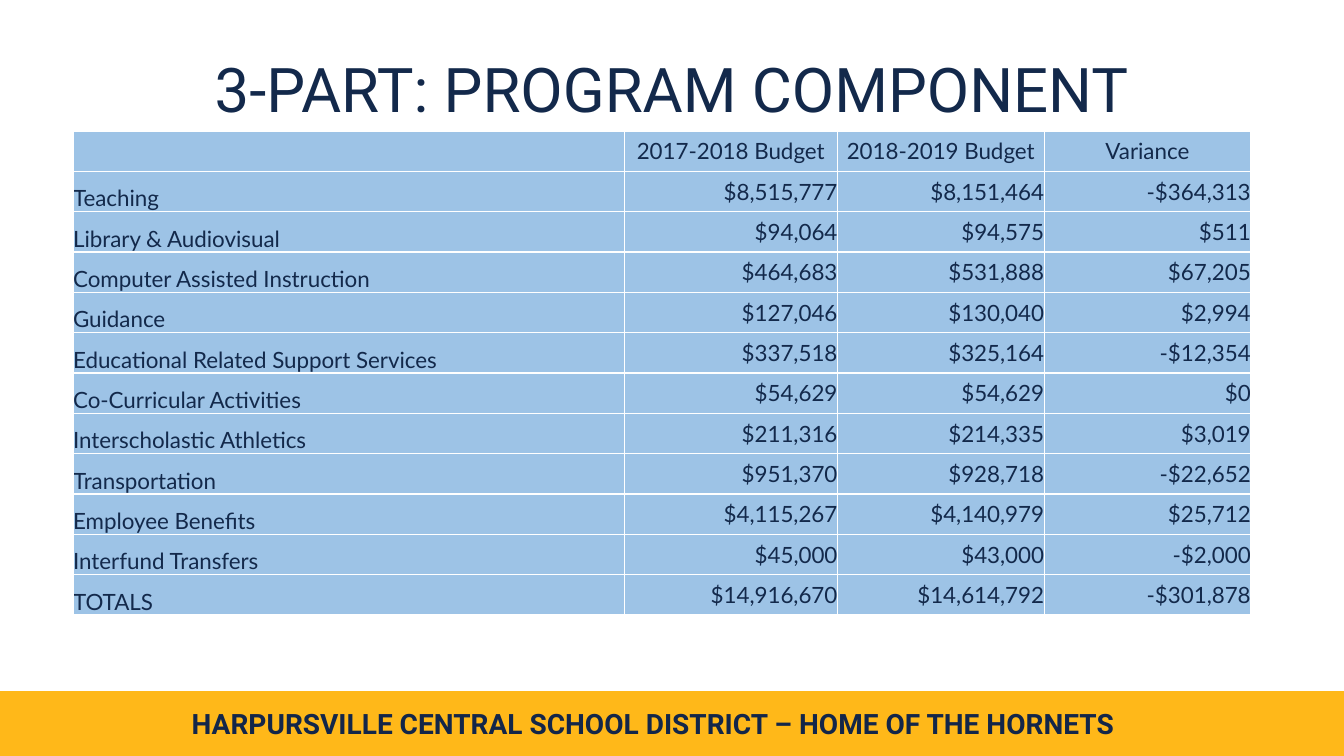
from dataclasses import dataclass

from lxml.etree import SubElement
from pptx import Presentation
from pptx.dml.color import RGBColor
from pptx.enum.shapes import MSO_SHAPE as Shape
from pptx.enum.text import MSO_ANCHOR as Anchor, MSO_AUTO_SIZE as AutoSize, PP_ALIGN as Align
from pptx.oxml.ns import qn
from pptx.util import Pt

PX = 7620
ROW_HEIGHT = 48
COLUMN_WIDTHS = (656, 254, 246, 246)
HEADINGS = ("", "2017-2018 Budget", "2018-2019 Budget", "Variance")
BUDGET = (
    ("Teaching", "$8,515,777", "$8,151,464", "-$364,313"),
    ("Library & Audiovisual", "$94,064", "$94,575", "$511"),
    ("Computer Assisted Instruction", "$464,683", "$531,888", "$67,205"),
    ("Guidance", "$127,046", "$130,040", "$2,994"),
    ("Educational Related Support Services", "$337,518", "$325,164", "-$12,354"),
    ("Co-Curricular Activities", "$54,629", "$54,629", "$0"),
    ("Interscholastic Athletics", "$211,316", "$214,335", "$3,019"),
    ("Transportation", "$951,370", "$928,718", "-$22,652"),
    ("Employee Benefits", "$4,115,267", "$4,140,979", "$25,712"),
    ("Interfund Transfers", "$45,000", "$43,000", "-$2,000"),
    ("TOTALS", "$14,916,670", "$14,614,792", "-$301,878"),
)


@dataclass(frozen=True)
class Theme:
    """Colours, fonts and type sizes of the slide."""
    navy: str = "13294B"
    footer_navy: str = "132649"
    gold: str = "FFB819"
    sky: str = "9DC3E6"
    white: str = "FFFFFF"
    display_font: str = "Roboto"
    table_font: str = "Lato"
    title_size: int = 44
    footer_size: int = 20
    table_size: int = 16


THEME = Theme()


def px(*lengths):
    """Turn pixel lengths into EMU."""
    return [length * PX for length in lengths]


def paint(fill, colour):
    """Give a fill one solid colour."""
    fill.solid()
    fill.fore_color.rgb = RGBColor.from_string(colour)


def write(para, text, font, size, colour, align, bold=False):
    """Add one formatted run to a paragraph."""
    para.alignment = align
    span = para.add_run()
    span.text = text
    span.font.name = font
    span.font.size = Pt(size)
    span.font.bold = bold
    span.font.color.rgb = RGBColor.from_string(colour)


def add_footer(page, text):
    """Draw the gold band and the district line on it."""
    band = page.shapes.add_shape(Shape.RECTANGLE, *px(0, 823, 1600, 76))
    band.shadow.inherit = False
    paint(band.fill, THEME.gold)
    paint(band.line.fill, THEME.gold)
    band.line.width = Pt(1)
    box = page.shapes.add_textbox(*px(211, 835, 1133, 53))
    box.text_frame.word_wrap = True
    box.text_frame.auto_size = AutoSize.SHAPE_TO_FIT_TEXT
    write(box.text_frame.paragraphs[0], text, THEME.display_font,
          THEME.footer_size, THEME.footer_navy, Align.CENTER, bold=True)


def set_title(page, text):
    """Place and fill the title placeholder."""
    title = page.shapes.title
    title.left, title.top, title.width, title.height = px(110, 48, 1380, 125)
    paint(title.fill, THEME.white)
    frame = title.text_frame
    frame.auto_size = AutoSize.NONE
    frame.vertical_anchor = Anchor.MIDDLE
    para = frame.paragraphs[0]
    para.line_spacing = 0.9
    write(para, text, THEME.display_font, THEME.title_size, THEME.navy, Align.CENTER)


def add_borders(cell):
    """Draw a thin white line on each side of a cell."""
    properties = cell._tc.get_or_add_tcPr()
    for place, side in enumerate(("a:lnL", "a:lnR", "a:lnT", "a:lnB")):
        line = SubElement(properties, qn(side), w=str(Pt(1)))
        properties.insert(place, line)
        solid = SubElement(line, qn("a:solidFill"))
        SubElement(solid, qn("a:srgbClr"), val=THEME.white)


def fill_cell(cell, text, align, anchor):
    """Format one table cell and write its text."""
    cell.margin_left = cell.margin_right = cell.margin_top = cell.margin_bottom = 0
    cell.vertical_anchor = anchor
    paint(cell.fill, THEME.sky)
    add_borders(cell)
    para = cell.text_frame.paragraphs[0]
    if text:
        write(para, text, THEME.table_font, THEME.table_size, THEME.navy, align)
    else:
        para.font.size = Pt(THEME.table_size)


def add_budget_table(page, left, top):
    """Add the budget table with its headings and rows."""
    rows = (HEADINGS, *BUDGET)
    size = px(left, top, sum(COLUMN_WIDTHS), ROW_HEIGHT * len(rows))
    table = page.shapes.add_table(len(rows), len(COLUMN_WIDTHS), *size).table
    table.horz_banding = False
    table.first_row = False
    for column, width in zip(table.columns, COLUMN_WIDTHS):
        column.width = width * PX
    for row_index, values in enumerate(rows):
        table.rows[row_index].height = ROW_HEIGHT * PX
        for column_index, text in enumerate(values):
            if row_index == 0:
                align, anchor = Align.CENTER, Anchor.MIDDLE
            elif column_index == 0:
                align, anchor = Align.LEFT, Anchor.BOTTOM
            else:
                align, anchor = Align.RIGHT, Anchor.MIDDLE
            fill_cell(table.cell(row_index, column_index), text, align, anchor)


def main():
    """Build the program component slide."""
    deck = Presentation()
    deck.slide_width, deck.slide_height = px(1600, 900)
    page = deck.slides.add_slide(deck.slide_layouts[5])
    paint(page.background.fill, THEME.white)
    add_footer(page, "HARPURSVILLE CENTRAL SCHOOL DISTRICT – HOME OF THE HORNETS")
    set_title(page, "3-PART: PROGRAM COMPONENT")
    add_budget_table(page, 87, 156)
    deck.save("out.pptx")


if __name__ == "__main__":
    main()
